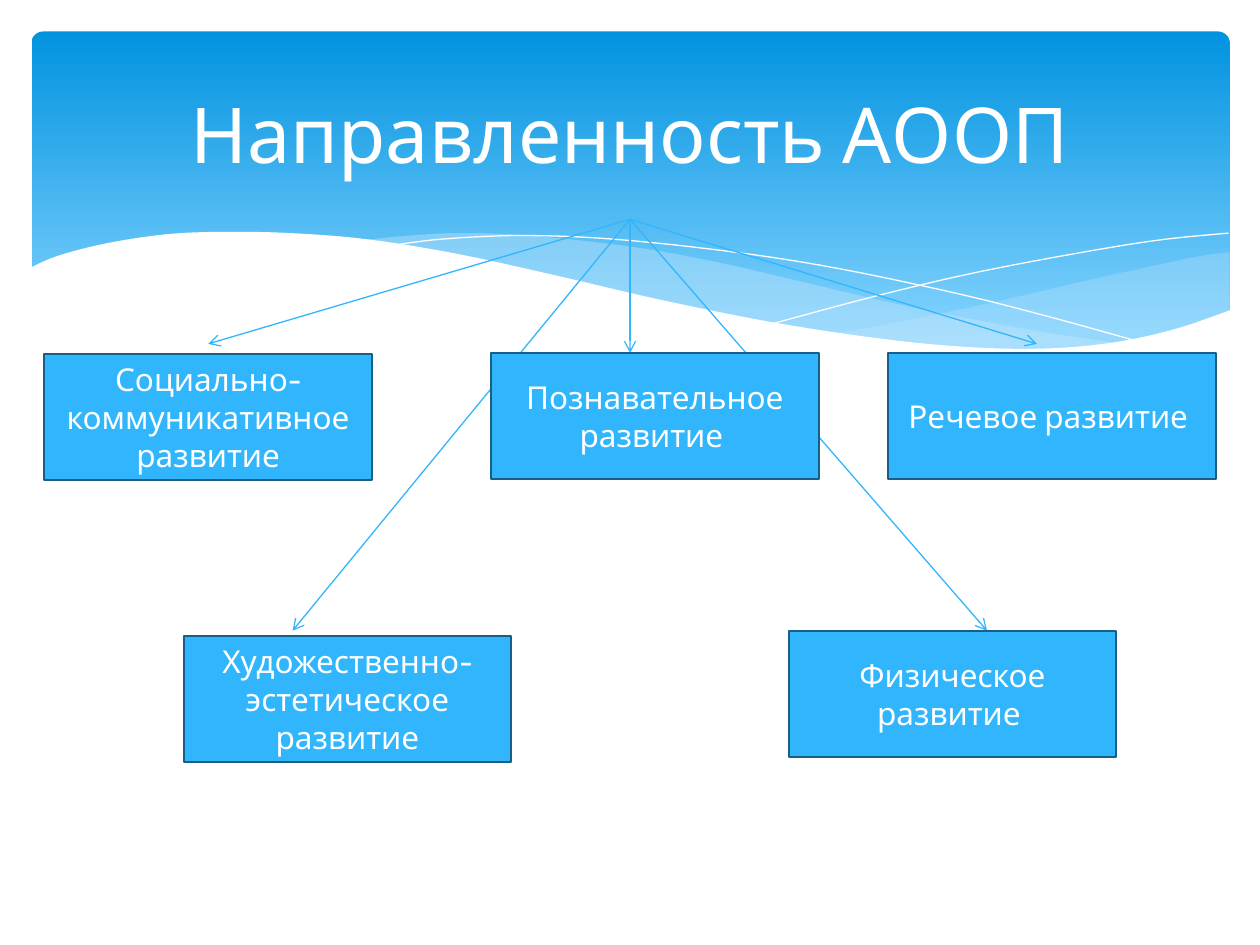
"""Build a slide with a wave banner and five boxes fed by arrows."""
from dataclasses import dataclass

from lxml import etree
from pptx import Presentation
from pptx.dml.color import RGBColor
from pptx.enum import shapes, text
from pptx.oxml import ns
from pptx.util import Pt


@dataclass(frozen=True)
class Theme:
    """Colours, font and sizes."""
    font: str = "Cabin"
    head: int = 44
    body: int = 18
    white: str = "FFFFFF"
    deep: str = "0293E0"
    light: str = "83D3FE"
    veil: str = "C6E7FC"
    blue: str = "31B6FD"
    edge: str = "195F84"


@dataclass(frozen=True)
class Box:
    """A labelled box."""
    label: str
    left: float
    top: float


@dataclass(frozen=True)
class Veil:
    """A translucent wave between two curves."""
    upper: tuple
    lower: tuple
    alpha: int


THEME = Theme()
BOX_W, BOX_H = 187.2, 72
HUB = (360, 125.3)

BOXES = (
    Box("Социально-коммуникативное развитие", 25.4, 202.3),
    Box("Познавательное развитие ", 280.7, 201.6),
    Box("Художественно-эстетическое развитие", 105, 363.5),
    Box("Физическое развитие ", 450.7, 360.4),
    Box("Речевое развитие ", 507.5, 201.6),
)
TIPS = ((119, 196.5), (592.5, 196.5), (360, 201.6), (167.2, 360.4), (564, 360.4))

VEILS = (
    Veil(((702.7, 144), (682.6, 146.9), (652.3, 153.4), (619.9, 160.6),
          (560.9, 174.2), (508.3, 185), (475.9, 190.8)),
         ((475.9, 190.8), (517.7, 195.1), (562.3, 199.4), (601.2, 199.4),
          (640.1, 195.8), (673.2, 188.6), (702.7, 177.8)), 29),
    Veil(((643, 196.6), (602.6, 190.8), (558, 182.9), (508.3, 172.8),
          (452.9, 159.8), (409.7, 149.8), (361.4, 141.1), (302.4, 134.6),
          (259.9, 133.2), (225.4, 135.4), (205.9, 137.5)),
         ((205.9, 137.5), (246.2, 143.3), (290.9, 151.9), (353.5, 167),
          (407.5, 178.6), (468, 190.1), (520, 197.3), (573.1, 200.2),
          (617, 199.4), (643, 196.6)), 40),
)
THREADS = (
    ((222.5, 140.4), (254.2, 136.5), (299.5, 134.6), (352.1, 136.8), (419, 144),
     (478.8, 153.4), (547.2, 167.8), (598.3, 180.7), (653, 195.8)),
    ((441.4, 185), (500.4, 169.2), (558.7, 155.5), (623.5, 143.3),
     (665.3, 136.8), (702, 133.2)),
)
WAVE = ((703.4, 177.1), (669.6, 188.6), (630, 196.6), (582.5, 199.4),
        (522.7, 195.8), (450.7, 185.8), (380.9, 172.1), (321.8, 158.4),
        (262.8, 145.4), (210.2, 136.8), (165.6, 133.2), (127.4, 132.5),
        (95, 133.9), (61.2, 139), (33.1, 146.2), (16.6, 153.4))
BASE = [(16.6, 236.9), (703.4, 236.9)]


def tint(code: str) -> RGBColor:
    """Turn a hex code into a colour."""
    return RGBColor.from_string(code)


def smooth(knots: tuple, steps: int = 6) -> list:
    """Sample a Catmull-Rom curve through the knots."""
    ends = (knots[0], *knots, knots[-1])
    curve = [knots[0]]
    for a, b, c, d in zip(ends, ends[1:], ends[2:], ends[3:]):
        for t in (n / steps for n in range(1, steps + 1)):
            curve.append(tuple(
                (2 * q + (r - p) * t + (2 * p - 5 * q + 4 * r - s) * t ** 2
                 + (3 * q - p - 3 * r + s) * t ** 3) / 2
                for p, q, r, s in zip(a, b, c, d)))
    return curve


def draw(slide, curve: list, closed: bool = True):
    """Draw a freeform through points given in points."""
    spots = [(Pt(x), Pt(y)) for x, y in curve]
    build = slide.shapes.build_freeform(*spots[0])
    build.add_line_segments(spots[1:], close=closed)
    shape = build.convert_to_shape()
    shape.shadow.inherit = False
    return shape


def paint(shape, code: str, alpha: int = 100) -> None:
    """Fill a shape without an outline."""
    shape.fill.solid()
    shape.fill.fore_color.rgb = tint(code)
    shape.line.fill.background()
    if alpha < 100:
        hue = shape.element.spPr.find(ns.qn("a:solidFill"))[0]
        etree.SubElement(hue, ns.qn("a:alpha"), val=str(alpha * 1000))


def banner(slide) -> None:
    """Draw the gradient banner and its waves."""
    card = slide.shapes.add_shape(shapes.MSO_SHAPE.ROUNDED_RECTANGLE,
                                  Pt(18), Pt(18), Pt(684.7), Pt(194.4))
    card.adjustments[0] = 0.034
    card.shadow.inherit = False
    card.line.fill.background()
    card.fill.gradient()
    card.fill.gradient_angle = 270
    for stop, code, place in zip(card.fill.gradient_stops,
                                 (THEME.deep, THEME.light), (0, 0.9)):
        stop.color.rgb = tint(code)
        stop.position = place
    for veil in VEILS:
        curve = smooth(veil.upper) + smooth(veil.lower)
        paint(draw(slide, curve), THEME.veil, veil.alpha)
    for thread in THREADS:
        line = draw(slide, smooth(thread), closed=False)
        line.fill.background()
        line.line.color.rgb = tint(THEME.white)
        line.line.width = Pt(0)
    paint(draw(slide, smooth(WAVE) + BASE), THEME.white)


def write(shape, words: str, size: int) -> None:
    """Set centred white text."""
    frame = shape.text_frame
    frame.text = words
    frame.word_wrap = True
    frame.vertical_anchor = text.MSO_ANCHOR.MIDDLE
    frame.paragraphs[0].alignment = text.PP_ALIGN.CENTER
    font = frame.paragraphs[0].runs[0].font
    font.name, font.size = THEME.font, Pt(size)
    font.color.rgb = tint(THEME.white)


def head(slide, words: str) -> None:
    """Place the title above the banner."""
    title = slide.shapes.title
    title.left, title.top, title.width, title.height = map(Pt, (36, 26.6, 648, 98.6))
    write(title, words, THEME.head)
    title.element.getparent().append(title.element)


def arrow(slide, tip: tuple) -> None:
    """Draw an arrow from the hub to a tip."""
    link = slide.shapes.add_connector(shapes.MSO_CONNECTOR.STRAIGHT,
                                      *map(Pt, HUB + tip))
    link.line.color.rgb = tint(THEME.blue)
    link.line.width = Pt(0.75)
    etree.SubElement(link.line._get_or_add_ln(), ns.qn("a:tailEnd"), type="arrow")
    etree.SubElement(link.element.spPr, ns.qn("a:effectLst"))


def place(slide, box: Box) -> None:
    """Draw a labelled box."""
    shape = slide.shapes.add_shape(shapes.MSO_SHAPE.RECTANGLE,
                                   *map(Pt, (box.left, box.top, BOX_W, BOX_H)))
    shape.shadow.inherit = False
    paint(shape, THEME.blue)
    shape.line.color.rgb = tint(THEME.edge)
    shape.line.width = Pt(1.25)
    write(shape, box.label, THEME.body)


def main() -> None:
    """Build and save the slide."""
    deck = Presentation()
    deck.slide_width, deck.slide_height = Pt(720), Pt(540)
    slide = deck.slides.add_slide(deck.slide_layouts[5])
    banner(slide)
    head(slide, "Направленность АООП")
    for tip in TIPS:
        arrow(slide, tip)
    for box in BOXES:
        place(slide, box)
    deck.save("out.pptx")


if __name__ == "__main__":
    main()
